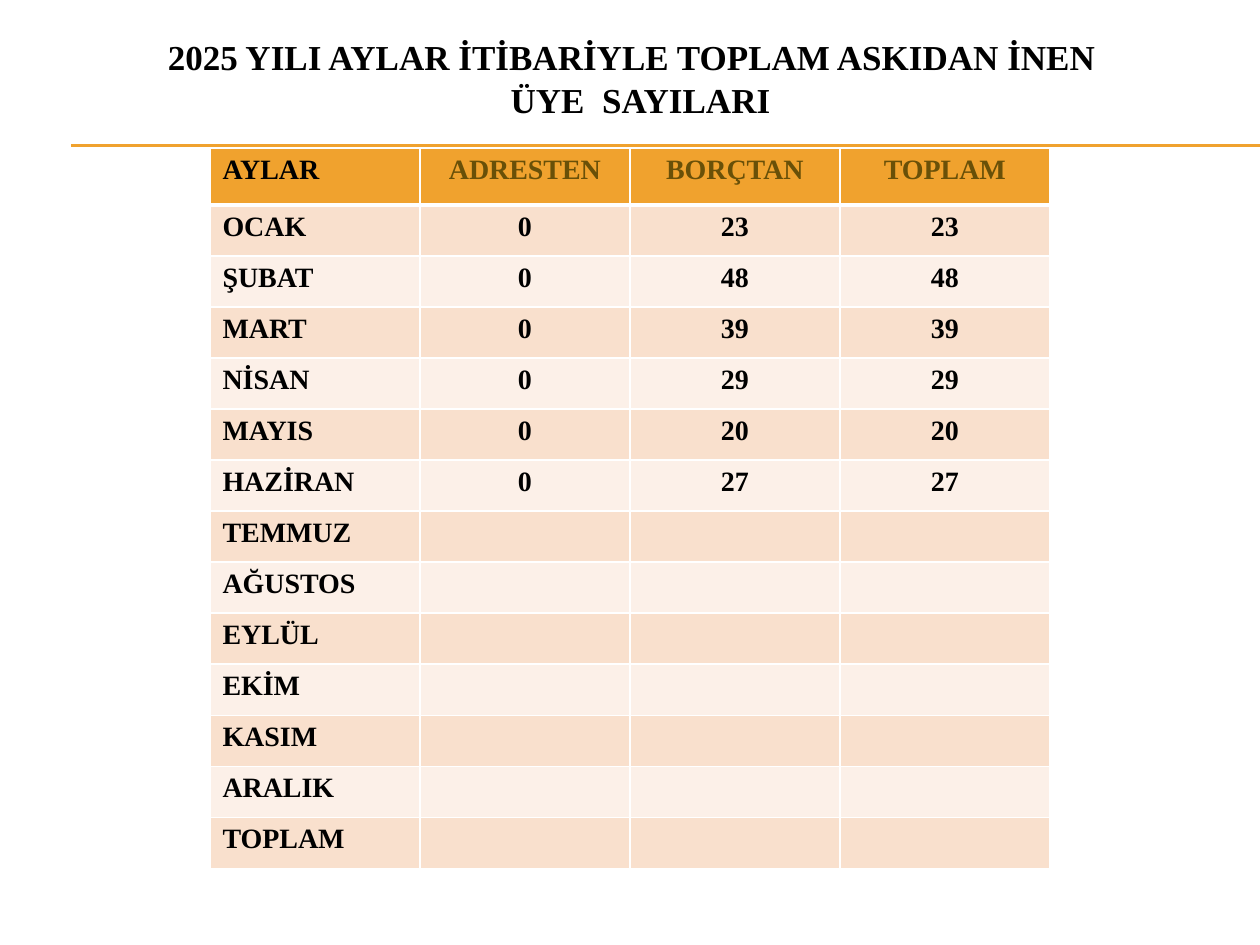
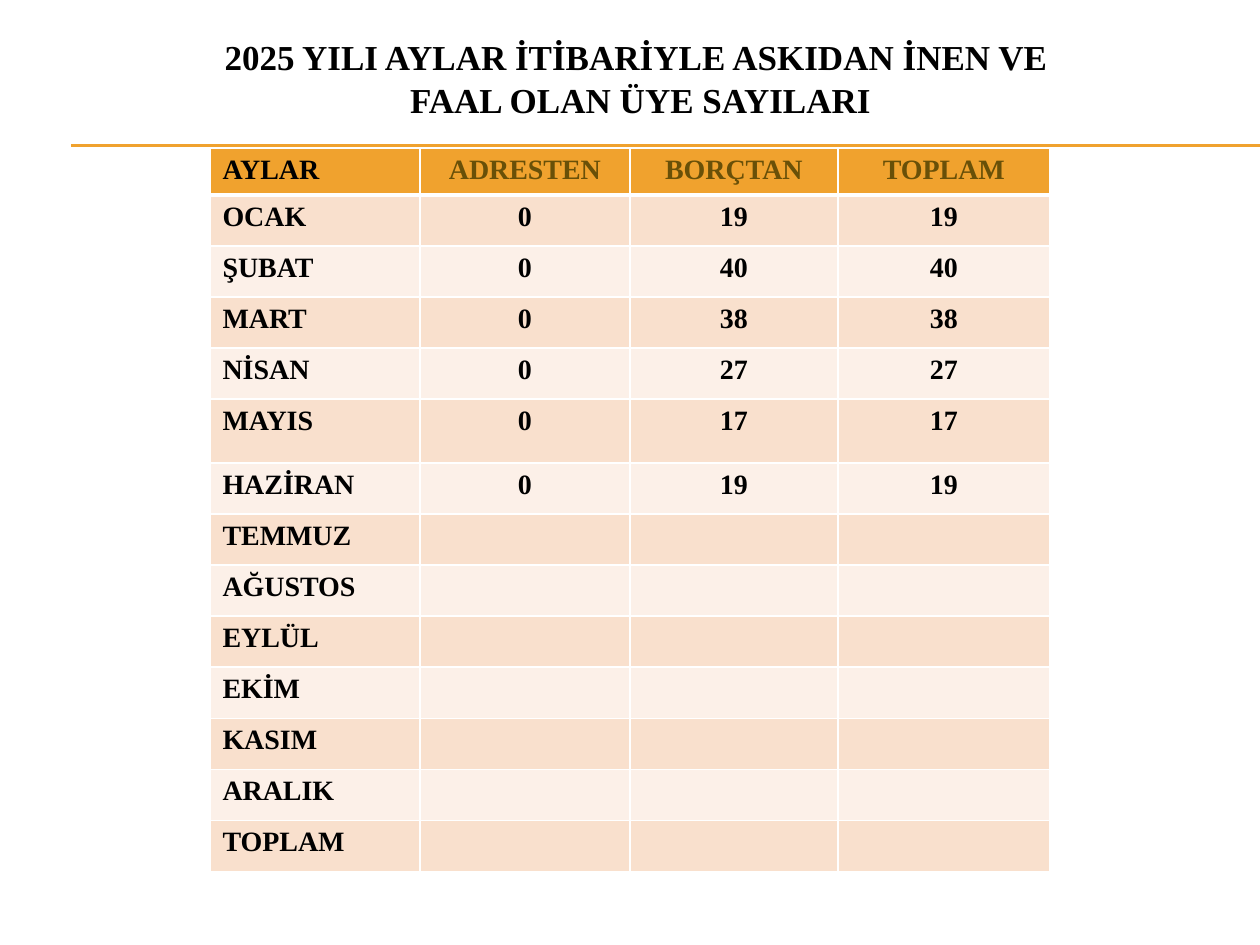
"""Builds two slides with monthly member tables for 2025."""
from copy import deepcopy

from lxml import etree
from pptx import Presentation
from pptx.dml.color import RGBColor
from pptx.enum.shapes import MSO_CONNECTOR
from pptx.enum.text import MSO_ANCHOR, MSO_AUTO_SIZE, PP_ALIGN
from pptx.oxml.ns import qn
from pptx.util import Emu, Pt

STRAIGHT = MSO_CONNECTOR.STRAIGHT
MIDDLE = MSO_ANCHOR.MIDDLE
NO_FIT = MSO_AUTO_SIZE.NONE
CENTER, LEFT = PP_ALIGN.CENTER, PP_ALIGN.LEFT

PX = 914400 / 126
FONT = "Times New Roman"
BLACK, WHITE, ORANGE, OLIVE = "000000", "FFFFFF", "F0A22E", "695008"
BANDS = ["FCF0E8", "F9E0CD"]

HEADINGS = ["AYLAR", "ADRESTEN", "BORÇTAN", "TOPLAM"]
MONTHS = ["OCAK", "ŞUBAT", "MART", "NİSAN", "MAYIS", "HAZİRAN", "TEMMUZ",
          "AĞUSTOS", "EYLÜL", "EKİM", "KASIM", "ARALIK", "TOPLAM"]
TABLE_LEFT, TABLE_TOP, TABLE_WIDTH, ROW_HEIGHT = 210, 148, 840, 51

PAGES = [
    {"title": ["2025 YILI AYLAR İTİBARİYLE TOPLAM ASKIDAN İNEN  ", "ÜYE  SAYILARI"],
     "debt_counts": [23, 48, 39, 29, 20, 27],
     "columns": [210, 210, 210, 210],
     "special_rows": {0: 57}},
    {"title": ["2025 YILI AYLAR İTİBARİYLE ASKIDAN İNEN VE ", "FAAL OLAN ÜYE SAYILARI"],
     "debt_counts": [19, 40, 38, 27, 17, 19],
     "columns": [210, 210, 208, 212],
     "special_rows": {0: 47, 5: 64}},
]


def color(value):
    return RGBColor.from_string(value)


def add_text(para, text, size, shade):
    span = para.add_run()
    span.text = text
    span.font.name = FONT
    span.font.size = Pt(size)
    span.font.bold = True
    span.font.color.rgb = color(shade)
    return span


deck = Presentation()
deck.slide_width = Emu(round(1260 * PX))
deck.slide_height = Emu(round(945 * PX))
title_only = deck.slide_layouts[5]

for content in PAGES:
    page = deck.slides.add_slide(title_only)

    title = page.shapes.title
    title.left, title.top, title.width, title.height = [
        Emu(round(length * PX)) for length in (42, 20, 1197, 116)]
    title.text_frame.vertical_anchor = MIDDLE
    title.text_frame.auto_size = NO_FIT
    para = title.text_frame.paragraphs[0]
    para.alignment = CENTER
    first_line, second_line = content["title"]
    span = add_text(para, first_line, 20, BLACK)
    para.add_line_break()
    para._p.find(qn("a:br")).append(deepcopy(span._r.find(qn("a:rPr"))))
    add_text(para, second_line, 20, BLACK)

    for rule_top in (145, 146):
        start, level, end = [Emu(round(length * PX)) for length in (71, rule_top, 1260)]
        rule = page.shapes.add_connector(STRAIGHT, start, level, end, level)
        rule.line.color.rgb = color(ORANGE)
        rule.line.width = Pt(0.75)
        etree.SubElement(rule._element.spPr, qn("a:effectLst"))

    rows = [HEADINGS]
    for index, month in enumerate(MONTHS):
        counts = content["debt_counts"][index:index + 1]
        rows.append([month, "0", *map(str, counts * 2)] if counts else [month, "", "", ""])
    heights = [content["special_rows"].get(index, ROW_HEIGHT) for index in range(len(rows))]

    frame = page.shapes.add_table(
        len(rows), len(HEADINGS),
        *[Emu(round(length * PX))
          for length in (TABLE_LEFT, TABLE_TOP, TABLE_WIDTH, sum(heights))])
    table = frame.table
    table.horz_banding = False
    for column, width in zip(table.columns, content["columns"]):
        column.width = Emu(round(width * PX))

    for row_index, values in enumerate(rows):
        table.rows[row_index].height = Emu(round(heights[row_index] * PX))
        for column_index, value in enumerate(values):
            cell = table.cell(row_index, column_index)
            borders = {"lnL": 1, "lnR": 1,
                       "lnT": 3 if row_index == 1 else 1,
                       "lnB": 3 if row_index == 0 else 1}
            properties = cell._tc.get_or_add_tcPr()
            for side, weight in borders.items():
                border = etree.SubElement(properties, qn(f"a:{side}"), w=str(Pt(weight)))
                paint = etree.SubElement(border, qn("a:solidFill"))
                etree.SubElement(paint, qn("a:srgbClr"), val=WHITE)
            cell.fill.solid()
            cell.fill.fore_color.rgb = color(BANDS[row_index % 2] if row_index else ORANGE)
            para = cell.text_frame.paragraphs[0]
            para.alignment = CENTER if column_index else LEFT
            if value:
                is_count_heading = row_index == 0 and column_index > 0
                add_text(para, value, 16, OLIVE if is_count_heading else BLACK)

deck.save("out.pptx")
